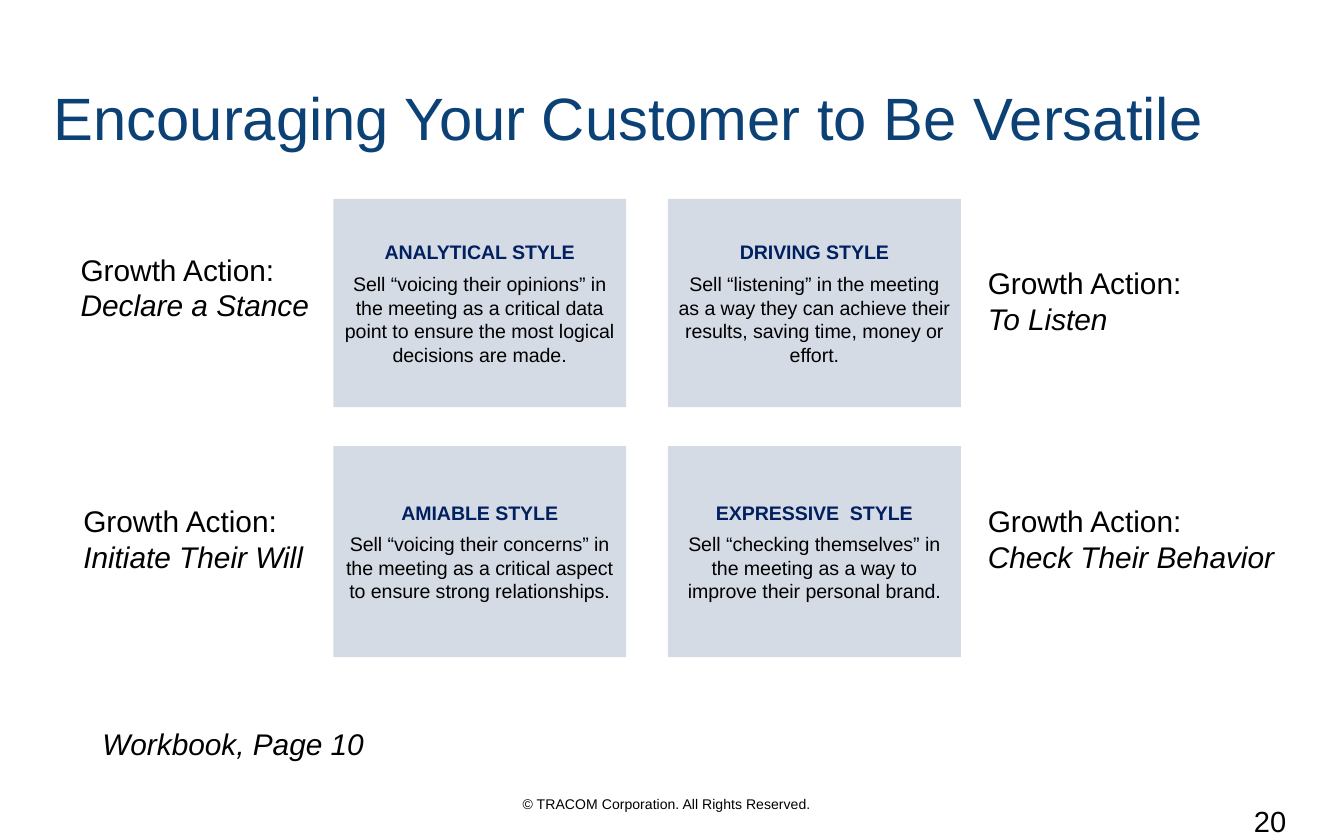
from pptx import Presentation
from pptx.dml.color import RGBColor
from pptx.enum import shapes, text
from pptx.util import Inches, Pt

TITLE_BLUE = RGBColor(0x0C, 0x41, 0x76)
HEADING_NAVY = RGBColor(0x00, 0x20, 0x60)
PANEL_GRAY = RGBColor(0xD5, 0xDB, 0xE5)
BLACK = RGBColor(0x00, 0x00, 0x00)

FONT = "Arial"
PANEL_WIDTH = 2.18
COLUMN_LEFTS = (2.48, 4.97)
ROWS = ((1.48, 1.55), (3.32, 1.57))
STYLES = (
    ("ANALYTICAL STYLE",
     "Sell “voicing their opinions” in the meeting as a critical data point "
     "to ensure the most logical decisions are made."),
    ("DRIVING STYLE",
     "Sell “listening” in the meeting as a way they can achieve their "
     "results, saving time, money or effort."),
    ("AMIABLE STYLE",
     "Sell “voicing their concerns” in the meeting as a critical aspect "
     "to ensure strong relationships."),
    ("EXPRESSIVE  STYLE",
     "Sell “checking themselves” in the meeting as a way to improve "
     "their personal brand."),
)
GROWTH_ACTIONS = (
    ("Declare a Stance", 0.28, 1.83, 2.18),
    ("Initiate Their Will", 0.3, 3.7, 2.18),
    ("To Listen", 7.03, 1.93, 2.18),
    ("Check Their Behavior", 7.03, 3.7, 2.59),
)


def format_font(font, size, color=BLACK, bold=False, italic=False):
    font.name = FONT
    font.size = Pt(size)
    font.color.rgb = color
    font.bold = bold
    font.italic = italic


def set_margins(text_frame, left, top, right, bottom):
    text_frame.margin_left = Inches(left)
    text_frame.margin_top = Inches(top)
    text_frame.margin_right = Inches(right)
    text_frame.margin_bottom = Inches(bottom)


def set_title(slide, words):
    title = slide.shapes.title
    title.left, title.top = Inches(0.3), Inches(0.51)
    title.width, title.height = Inches(8.91), Inches(0.72)
    text_frame = title.text_frame
    text_frame.text = words
    text_frame.word_wrap = True
    text_frame.vertical_anchor = text.MSO_ANCHOR.MIDDLE
    set_margins(text_frame, 0.1, 0.05, 0.1, 0.05)
    paragraph = text_frame.paragraphs[0]
    paragraph.alignment = text.PP_ALIGN.LEFT
    format_font(paragraph.runs[0].font, 32, TITLE_BLUE)


def add_text_frame(slide, left, top, width, height):
    box = slide.shapes.add_textbox(
        Inches(left), Inches(top), Inches(width), Inches(height))
    box.text_frame.word_wrap = True
    return box.text_frame


def add_label(slide, words, left, top, width, height, size, italic=False):
    text_frame = add_text_frame(slide, left, top, width, height)
    text_frame.text = words
    paragraph = text_frame.paragraphs[0]
    paragraph.alignment = text.PP_ALIGN.CENTER
    format_font(paragraph.runs[0].font, size, italic=italic)


def add_style_panel(slide, heading, advice, left, top, height):
    panel = slide.shapes.add_shape(
        shapes.MSO_SHAPE.RECTANGLE,
        Inches(left), Inches(top), Inches(PANEL_WIDTH), Inches(height))
    panel.shadow.inherit = False
    panel.fill.solid()
    panel.fill.fore_color.rgb = PANEL_GRAY
    panel.line.fill.background()
    text_frame = panel.text_frame
    text_frame.word_wrap = True
    text_frame.vertical_anchor = text.MSO_ANCHOR.MIDDLE
    set_margins(text_frame, 0.07, 0.04, 0.07, 0.04)
    text_frame.text = f"{heading}\n{advice}"
    heading_paragraph, advice_paragraph = text_frame.paragraphs
    heading_paragraph.space_after = Pt(4.5)
    for paragraph in text_frame.paragraphs:
        paragraph.alignment = text.PP_ALIGN.CENTER
    format_font(heading_paragraph.runs[0].font, 10.5, HEADING_NAVY, bold=True)
    format_font(advice_paragraph.runs[0].font, 10.5)


def add_growth_action(slide, action, left, top, width):
    text_frame = add_text_frame(slide, left, top, width, 0.54)
    set_margins(text_frame, 0.32, 0.04, 0.09, 0.04)
    text_frame.text = f"Growth Action:\v{action}"
    label_run, action_run = text_frame.paragraphs[0].runs
    format_font(label_run.font, 16)
    format_font(action_run.font, 16, italic=True)


def main():
    presentation = Presentation()
    presentation.slide_width = Inches(10)
    presentation.slide_height = Inches(6.25)
    slide = presentation.slides.add_slide(presentation.slide_layouts[5])

    set_title(slide, "Encouraging Your Customer to Be Versatile")
    cells = [(left, top, height) for top, height in ROWS for left in COLUMN_LEFTS]
    for (heading, advice), cell in zip(STYLES, cells):
        add_style_panel(slide, heading, advice, *cell)
    for growth_action in GROWTH_ACTIONS:
        add_growth_action(slide, *growth_action)

    add_label(slide, "Workbook, Page 10", 0.61, 5.35, 2.25, 0.37, 16, italic=True)
    add_label(slide, "© TRACOM Corporation. All Rights Reserved.",
              3.26, 5.87, 3.4, 0.23, 7.5)
    add_label(slide, "20", 9.07, 5.93, 0.76, 0.33, 15.6)
    presentation.save("out.pptx")


if __name__ == "__main__":
    main()
